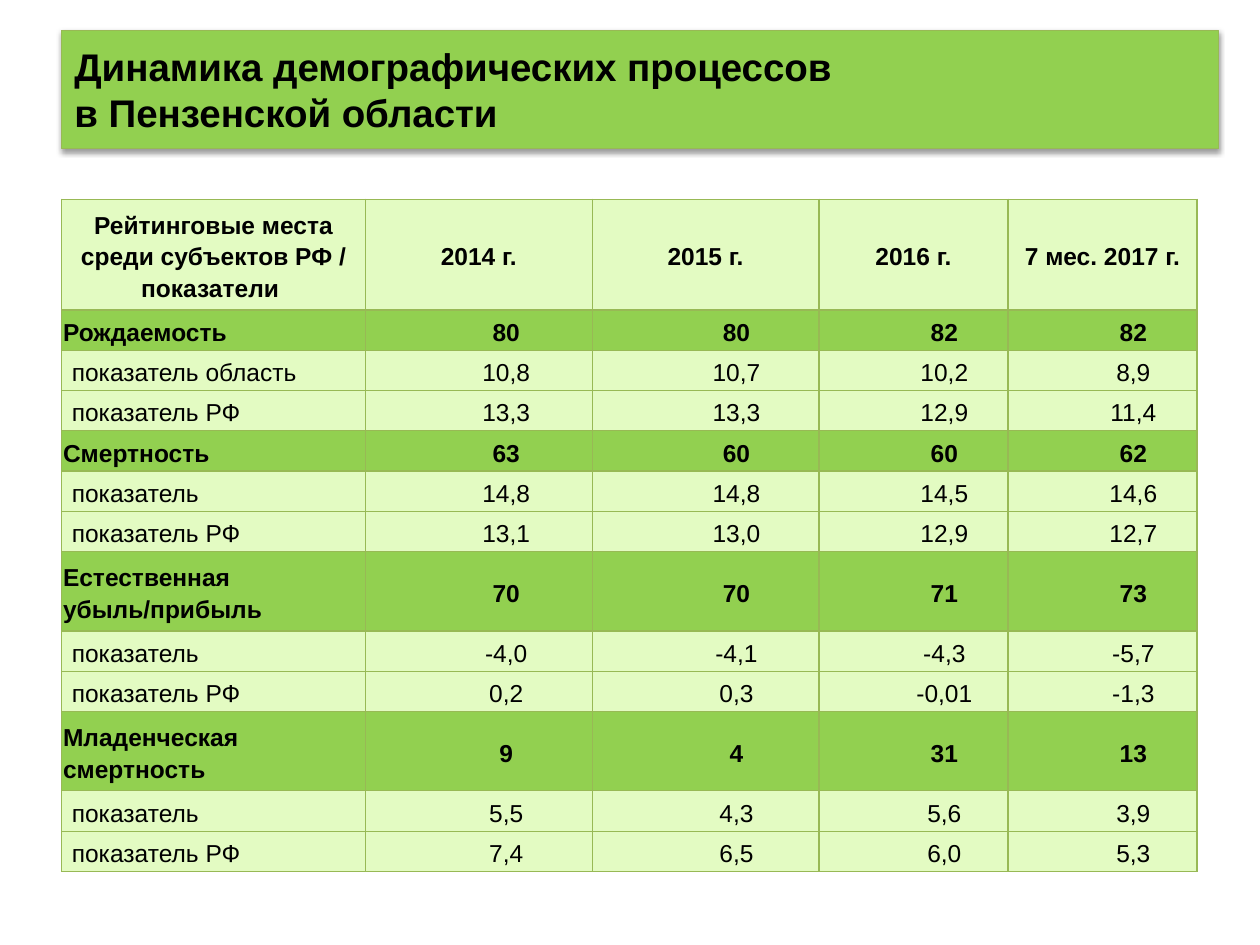
from lxml import etree
from pptx import Presentation
from pptx.dml.color import RGBColor
from pptx.enum.text import MSO_ANCHOR, MSO_AUTO_SIZE, PP_ALIGN
from pptx.oxml import parse_xml
from pptx.oxml.ns import nsdecls, qn
from pptx.util import Inches, Pt

GREEN = RGBColor(0x92, 0xD0, 0x50)
PALE = RGBColor(0xE3, 0xFB, 0xC2)
OUTLINE = RGBColor(0x98, 0xB9, 0x55)
BLACK = RGBColor(0, 0, 0)
FONT = "Arial"
LINE_WIDTH = Pt(0.75)

TITLE = "Динамика демографических процессов \vв Пензенской области"
HEADER = ["Рейтинговые места среди субъектов РФ / показатели ",
          "2014 г.", "2015 г.", "2016 г.", "7 мес. 2017 г."]
GROUPS = [
    [["Рождаемость ", "80 ", "80", "82", "82"],
     ["показатель область ", "10,8 ", "10,7", "10,2", "8,9"],
     ["показатель РФ ", "13,3 ", "13,3", "12,9", "11,4"]],
    [["Смертность ", "63 ", "60", "60", "62"],
     ["показатель ", "14,8 ", "14,8", "14,5", "14,6"],
     ["показатель РФ ", "13,1 ", "13,0", "12,9", "12,7"]],
    [["Естественная\nубыль/прибыль ", "70 ", "70", "71", "73"],
     ["показатель ", "-4,0 ", "-4,1", "-4,3", "-5,7"],
     ["показатель РФ ", "0,2 ", "0,3", "-0,01", "-1,3"]],
    [["Младенческая\vсмертность", "9 ", "4", "31", "13"],
     ["показатель ", "5,5 ", "4,3", "5,6", "3,9"],
     ["показатель РФ ", "7,4 ", "6,5", "6,0", "5,3"]],
]
COLUMN_WIDTHS = [2.41, 1.8, 1.8, 1.5, 1.5]
HEADER_HEIGHT, ROW_HEIGHT, TALL_HEIGHT = 0.88, 0.32, 0.63


def format_runs(para, size, bold):
    for span in para.runs:
        span.font.name = FONT
        span.font.size = Pt(size)
        span.font.bold = bold
        span.font.color.rgb = BLACK


def add_shadow(shape):
    shape._element.spPr.append(parse_xml(
        f'<a:effectLst {nsdecls("a")}>'
        f'<a:outerShdw blurRad="{Pt(3.1)}" dist="{Pt(1.6)}" dir="5400000" rotWithShape="0">'
        '<a:srgbClr val="000000"><a:alpha val="38000"/></a:srgbClr>'
        '</a:outerShdw></a:effectLst>'))


def place_title(page, left, top, width, height):
    title = page.shapes.title
    title.left, title.top = Inches(left), Inches(top)
    title.width, title.height = Inches(width), Inches(height)
    title.fill.solid()
    title.fill.fore_color.rgb = GREEN
    title.line.color.rgb = OUTLINE
    title.line.width = LINE_WIDTH
    add_shadow(title)
    frame = title.text_frame
    frame.text = TITLE
    frame.auto_size = MSO_AUTO_SIZE.NONE
    frame.vertical_anchor = MSO_ANCHOR.MIDDLE
    para = frame.paragraphs[0]
    para.alignment = PP_ALIGN.LEFT
    format_runs(para, 22, True)


def add_borders(cell):
    properties = cell._tc.get_or_add_tcPr()
    for side in ("a:lnL", "a:lnR", "a:lnT", "a:lnB"):
        border = etree.SubElement(properties, qn(side), w=str(LINE_WIDTH))
        fill = etree.SubElement(border, qn("a:solidFill"))
        etree.SubElement(fill, qn("a:srgbClr"), val=str(OUTLINE))


def fill_cell(cell, text, color, bold, align, margin=0.01, indent=0):
    add_borders(cell)
    cell.fill.solid()
    cell.fill.fore_color.rgb = color
    cell.vertical_anchor = MSO_ANCHOR.MIDDLE
    cell.margin_left = Inches(margin)
    cell.margin_right = cell.margin_top = Inches(0.01)
    cell.margin_bottom = 0
    cell.text_frame.text = text
    for para in cell.text_frame.paragraphs:
        para.alignment = align
        para.line_spacing = 1.15
        if indent:
            para._p.get_or_add_pPr().set("indent", str(Inches(indent)))
        format_runs(para, 14, bold)


def place_table(page, left, top, width, height):
    rows = [row for group in GROUPS for row in group]
    table = page.shapes.add_table(
        len(rows) + 1, len(HEADER),
        Inches(left), Inches(top), Inches(width), Inches(height)).table
    for column, column_width in zip(table.columns, COLUMN_WIDTHS):
        column.width = Inches(column_width)

    table.rows[0].height = Inches(HEADER_HEIGHT)
    for column, text in enumerate(HEADER):
        fill_cell(table.cell(0, column), text, PALE, True, PP_ALIGN.CENTER)

    leads = [group[0] for group in GROUPS]
    for number, row in enumerate(rows, start=1):
        lead = row in leads
        color = GREEN if lead else PALE
        label, *values = row
        two_lines = len(label.splitlines()) > 1
        table.rows[number].height = Inches(TALL_HEIGHT if two_lines else ROW_HEIGHT)
        align = PP_ALIGN.LEFT if "\v" in label else PP_ALIGN.JUSTIFY
        fill_cell(table.cell(number, 0), label, color, lead, align,
                  margin=0.01 if lead else 0.08)
        for column, value in enumerate(values, start=1):
            fill_cell(table.cell(number, column), value, color, lead,
                      PP_ALIGN.CENTER, indent=0.49)


def main():
    deck = Presentation()
    deck.slide_width, deck.slide_height = Inches(10), Inches(7.5)
    page = deck.slides.add_slide(deck.slide_layouts[5])
    place_title(page, 0.49, 0.24, 9.18, 0.94)
    place_table(page, 0.49, 1.58, 9, 5.33)
    deck.save("out.pptx")


if __name__ == "__main__":
    main()
